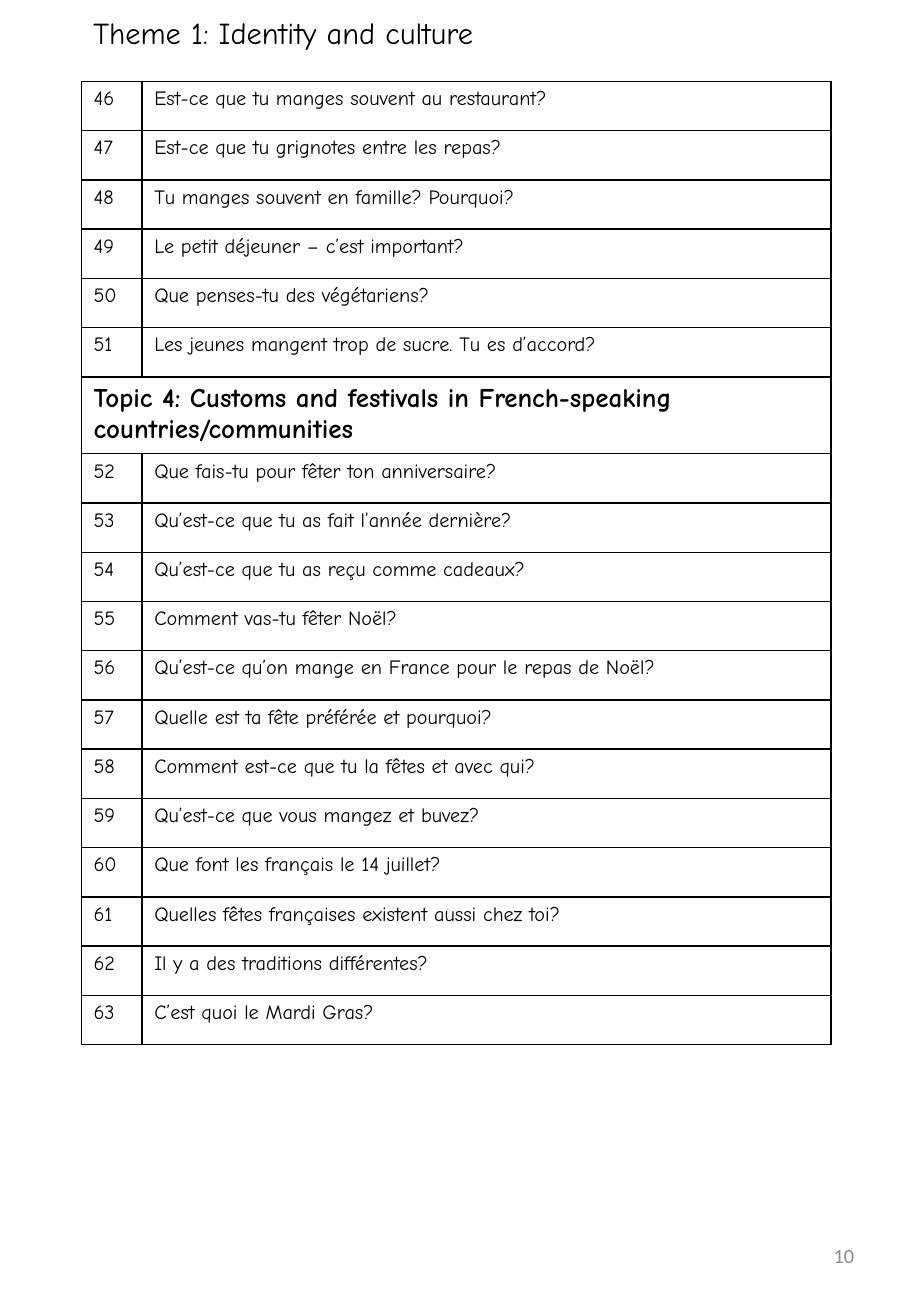
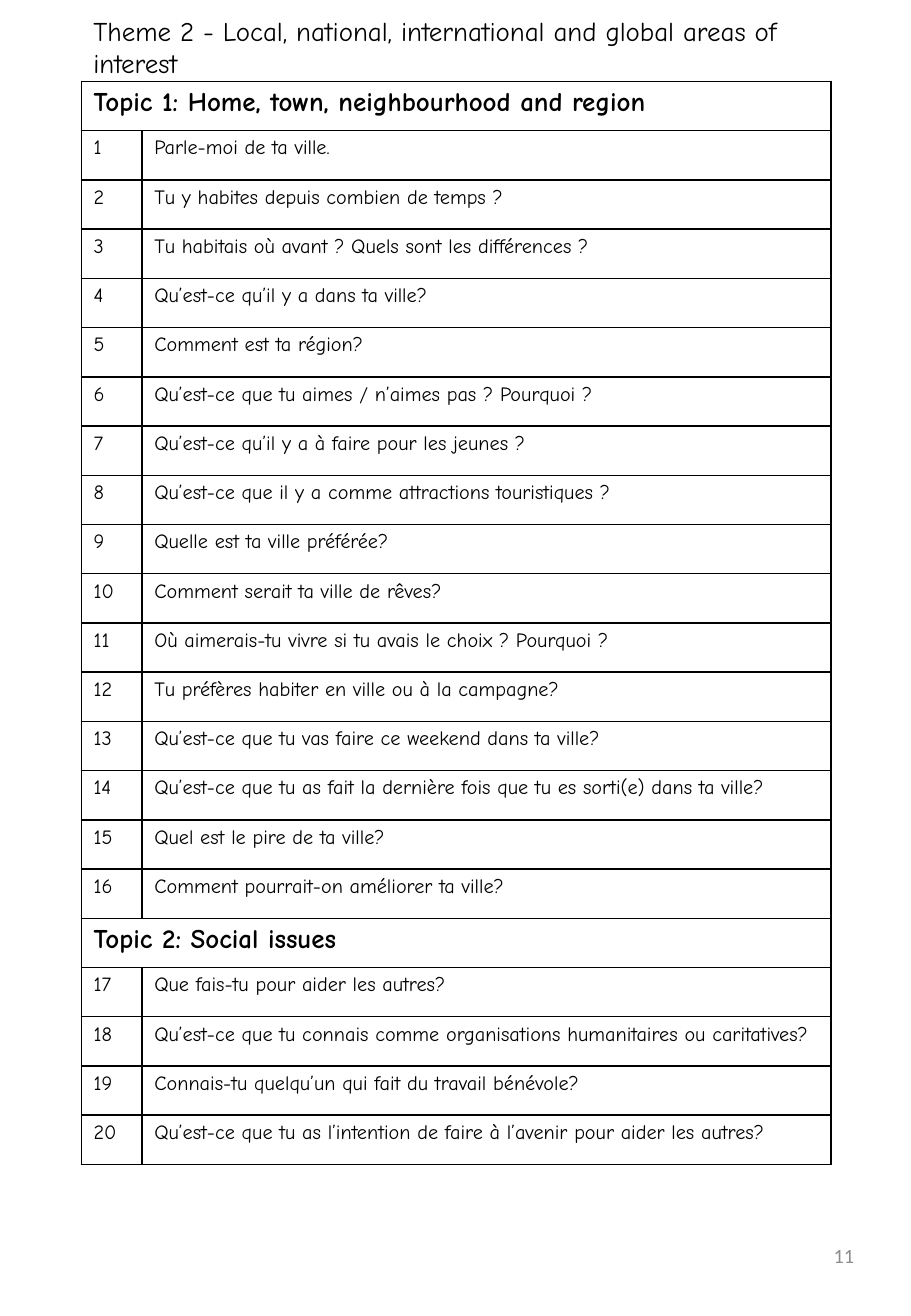
from lxml import etree
from pptx import Presentation
from pptx import util as u
from pptx.dml.color import RGBColor
from pptx.enum import text
from pptx.oxml import ns

PAGE_WIDTH, PAGE_HEIGHT = 7.5, 10.83
LEFT, TABLE_TOP = 0.67, 0.67
COLUMNS = (0.5, 5.67)
ROW_HEIGHT = 8.92 / 22
BODY_FONT, NUMBER_FONT = "Comic Neue", "Calibri"
INK, GREY = "000000", "8C8C8C"
BODY_SIZE, TOPIC_SIZE = 12, 16

FOOD = [
    "Est-ce que tu manges souvent au restaurant?",
    "Est-ce que tu grignotes entre les repas?",
    "Tu manges souvent en famille? Pourquoi?",
    "Le petit déjeuner – c’est important?",
    "Que penses-tu des végétariens?",
    "Les jeunes mangent trop de sucre. Tu es d’accord?",
]
FESTIVALS = [
    "Que fais-tu pour fêter ton anniversaire?",
    "Qu’est-ce que tu as fait l’année dernière?",
    "Qu’est-ce que tu as reçu comme cadeaux?",
    "Comment vas-tu fêter Noël?",
    "Qu’est-ce qu’on mange en France pour le repas de Noël?",
    "Quelle est ta fête préférée et pourquoi?",
    "Comment est-ce que tu la fêtes et avec qui?",
    "Qu’est-ce que vous mangez et buvez?",
    "Que font les français le 14 juillet?",
    "Quelles fêtes françaises existent aussi chez toi?",
    "Il y a des traditions différentes?",
    "C’est quoi le Mardi Gras?",
]
HOME = [
    "Parle-moi de ta ville.",
    "Tu y habites depuis combien de temps ?",
    "Tu habitais où avant ? Quels sont les différences ?",
    "Qu’est-ce qu’il y a dans ta ville?",
    "Comment est ta région?",
    "Qu’est-ce que tu aimes / n’aimes pas ? Pourquoi ?",
    "Qu’est-ce qu’il y a à faire pour les jeunes ?",
    "Qu’est-ce que il y a comme attractions touristiques ?",
    "Quelle est ta ville préférée?",
    "Comment serait ta ville de rêves?",
    "Où aimerais-tu vivre si tu avais le choix ? Pourquoi ?",
    "Tu préfères habiter en ville ou à la campagne?",
    "Qu’est-ce que tu vas faire ce weekend dans ta ville?",
    "Qu’est-ce que tu as fait la dernière fois que tu es sorti(e) dans ta ville?",
    "Quel est le pire de ta ville?",
    "Comment pourrait-on améliorer ta ville?",
]
SOCIAL = [
    "Que fais-tu pour aider les autres?",
    "Qu’est-ce que tu connais comme organisations humanitaires ou caritatives?",
    "Connais-tu quelqu’un qui fait du travail bénévole?",
    "Qu’est-ce que tu as l’intention de faire à l’avenir pour aider les autres?",
]
FESTIVALS_TOPIC = "Topic 4: Customs and festivals in French-speaking countries/communities"
HOME_TOPIC = "Topic 1: Home, town, neighbourhood and region"
SOCIAL_TOPIC = "Topic 2: Social issues"


def color(value):
    """Turn a hex string into a colour."""
    return RGBColor.from_string(value)


def write(frame, words, size, font=BODY_FONT, ink=INK, bold=False):
    """Put one styled paragraph in a text frame and return it."""
    frame.word_wrap = True
    para = frame.paragraphs[0]
    para.text = words
    para.font.size = u.Pt(size)
    para.font.name = font
    para.font.bold = bold
    para.font.color.rgb = color(ink)
    return para


def add_text(page, place, words, size, **style):
    """Add a text box at left, top, width, height in inches."""
    box = page.shapes.add_textbox(*map(u.Inches, place))
    return box.text_frame, write(box.text_frame, words, size, **style)


def add_title(page, words, size, height):
    """Add the theme title above the table."""
    add_text(page, (LEFT, 0.07, 6.08, height), words, size)


def add_page_number(page, number):
    """Add the grey number at the bottom right."""
    frame, para = add_text(page, (5.38, 10.04, 1.75, 0.58), str(number),
                           BODY_SIZE, font=NUMBER_FONT, ink=GREY)
    frame.vertical_anchor = text.MSO_ANCHOR.MIDDLE
    para.alignment = text.PP_ALIGN.RIGHT


def style_cell(cell):
    """Give a cell thin black borders and no fill."""
    properties = cell._tc.get_or_add_tcPr()
    for side in "LRTB":
        line = etree.SubElement(properties, ns.qn(f"a:ln{side}"), w=str(u.Pt(1)))
        fill = etree.SubElement(line, ns.qn("a:solidFill"))
        etree.SubElement(fill, ns.qn("a:srgbClr"), val=INK)
    cell.fill.background()


def table_rows(sections, first):
    """List (number, words) rows; a topic row has no number."""
    rows = []
    for topic, questions in sections:
        if topic:
            rows.append((None, topic))
        rows += enumerate(questions, first)
        first += len(questions)
    return rows


def add_questions(page, sections, first):
    """Add the table of topics and numbered questions."""
    rows = table_rows(sections, first)
    table = page.shapes.add_table(
        len(rows), len(COLUMNS), u.Inches(LEFT), u.Inches(TABLE_TOP),
        u.Inches(sum(COLUMNS)), u.Inches(ROW_HEIGHT * len(rows))).table
    table.first_row = table.horz_banding = False
    for column, width in zip(table.columns, COLUMNS):
        column.width = u.Inches(width)
    for cell in table.iter_cells():
        style_cell(cell)
    for index, (number, words) in enumerate(rows):
        table.rows[index].height = u.Inches(ROW_HEIGHT)
        label, question = table.cell(index, 0), table.cell(index, 1)
        if number is None:
            label.merge(question)
            write(label.text_frame, words, TOPIC_SIZE, bold=True)
        else:
            write(label.text_frame, str(number), BODY_SIZE)
            write(question.text_frame, words, BODY_SIZE)


def add_page(deck, number, title, title_size, title_height, sections, first):
    """Add one page of questions."""
    page = deck.slides.add_slide(deck.slide_layouts[6])
    add_page_number(page, number)
    add_questions(page, sections, first)
    add_title(page, title, title_size, title_height)


def main():
    """Build and save the deck."""
    deck = Presentation()
    deck.slide_width, deck.slide_height = u.Inches(PAGE_WIDTH), u.Inches(PAGE_HEIGHT)
    add_page(deck, 10, "Theme 1: Identity and culture", 18, 0.42,
             [(None, FOOD), (FESTIVALS_TOPIC, FESTIVALS)], 46)
    add_page(deck, 11,
             "Theme 2 - Local, national, international and global areas of interest",
             16, 0.64, [(HOME_TOPIC, HOME), (SOCIAL_TOPIC, SOCIAL)], 1)
    deck.save("out.pptx")


if __name__ == "__main__":
    main()
